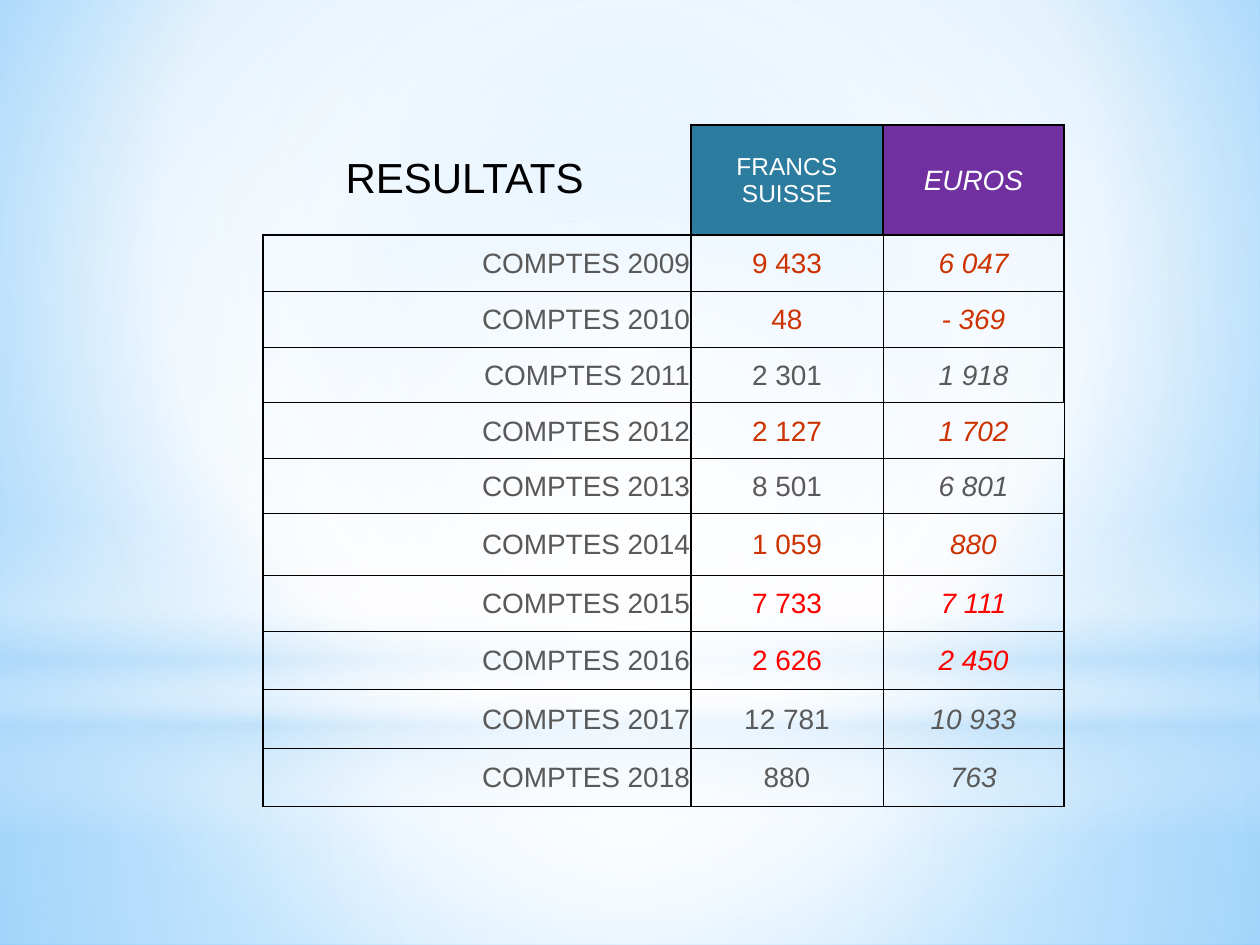
"""Build the yearly results slide with its table in Swiss francs and euros."""
from dataclasses import dataclass

from lxml import etree
from pptx import Presentation
from pptx.dml.color import RGBColor
from pptx.enum.shapes import MSO_SHAPE
from pptx.enum.text import MSO_ANCHOR, PP_ALIGN
from pptx.oxml.ns import qn
from pptx.util import Pt

PX = 914400 // 126
RECT, OVAL = MSO_SHAPE.RECTANGLE, MSO_SHAPE.OVAL
LEFT, CENTER, RIGHT = PP_ALIGN.LEFT, PP_ALIGN.CENTER, PP_ALIGN.RIGHT
MIDDLE, TOP = MSO_ANCHOR.MIDDLE, MSO_ANCHOR.TOP
NO_STYLE = "{2D5ABB26-0587-4C30-8999-92F81FD0307C}"


@dataclass(frozen=True)
class Theme:
    font: str = "Arial"
    black: str = "000000"
    white: str = "FFFFFF"
    grey: str = "595959"
    rust: str = "CC3300"
    red: str = "FF0000"
    teal: str = "2C7C9F"
    purple: str = "7030A0"
    haze: str = "B4DCFA"
    sky: str = "9ED5FF"
    deep_sky: str = "5BB9FF"
    title: int = 24
    body: int = 16
    small: int = 14


T = Theme()


def write(tf, text, size=T.body, color=T.grey, italic=False, align=CENTER):
    p = tf.paragraphs[0]
    p.alignment = align
    r = p.add_run()
    r.text = text
    r.font.name = T.font
    r.font.size = Pt(size)
    r.font.bold = False
    r.font.italic = italic
    r.font.color.rgb = RGBColor.from_string(color)


def blend(fill, element, stops, focus):
    fill.gradient()
    grad = next(element.iter(qn("a:gradFill")))
    for child in list(grad):
        grad.remove(child)
    gs_lst = etree.SubElement(grad, qn("a:gsLst"))
    for pos, color, alpha in stops:
        gs = etree.SubElement(gs_lst, qn("a:gs"), pos=str(pos * 1000))
        clr = etree.SubElement(gs, qn("a:srgbClr"), val=color)
        if alpha < 100:
            etree.SubElement(clr, qn("a:alpha"), val=str(alpha * 1000))
    if focus is None:
        etree.SubElement(grad, qn("a:lin"), ang="5400000", scaled="0")
    else:
        way = etree.SubElement(grad, qn("a:path"), path="circle")
        sides = {k: str(v * 1000) for k, v in zip("ltrb", focus)}
        etree.SubElement(way, qn("a:fillToRect"), **sides)


prs = Presentation()
prs.slide_width, prs.slide_height = 1260 * PX, 945 * PX
s = prs.slides.add_slide(prs.slide_layouts[5])
blend(s.background.fill, s.element,
      [(0, T.sky, 100), (60, T.white, 100), (100, T.deep_sky, 100)], (20, 10, 20, 60))

MID = (50, 50, 50, 50)
glows = [
    (RECT, 703, 242, MID, [(0, T.white, 91), (37, T.white, 76), (100, T.haze, 79)]),
    (RECT, 0, 703, MID, [(0, T.white, 89), (48, T.white, 62), (100, T.haze, 79)]),
    (RECT, 519, 315, None, [(0, T.white, 0), (29, T.white, 30), (45, T.haze, 40),
                            (55, T.white, 26), (65, T.haze, 60), (100, T.white, 0)]),
    (OVAL, 221, 703, MID, [(0, T.white, 100), (56, T.white, 0)]),
]
for kind, top, height, focus, stops in glows:
    sp = s.shapes.add_shape(kind, 0, top * PX, 1260 * PX, height * PX)
    sp.shadow.inherit = False
    sp.line.fill.background()
    blend(sp.fill, sp.element, stops, focus)

results = [
    (2009, "9 433", "6 047", T.rust),
    (2010, "48", "- 369", T.rust),
    (2011, "2 301", "1 918", T.grey),
    (2012, "2 127", "1 702", T.rust),
    (2013, "8 501", "6 801", T.grey),
    (2014, "1 059", "880", T.rust),
    (2015, "7 733", "7 111", T.red),
    (2016, "2 626", "2 450", T.red),
    (2017, "12 781", "10 933", T.grey),
    (2018, "880", "763", T.grey),
]
widths = [428, 192, 181]
heights = [110, 56, 56, 56, 56, 55, 62, 56, 58, 59, 58]
frame = s.shapes.add_table(len(heights), len(widths), 263 * PX, 125 * PX,
                           sum(widths) * PX, sum(heights) * PX)
table = frame.table
table.first_row = table.horz_banding = False
next(table._tbl.iter(qn("a:tableStyleId"))).text = NO_STYLE
for col, width in zip(table.columns, widths):
    col.width = width * PX
for row, height in zip(table.rows, heights):
    row.height = height * PX

write(table.cell(0, 1).text_frame, "FRANCS SUISSE", size=T.small, color=T.white)
write(table.cell(0, 2).text_frame, "EUROS", color=T.white, italic=True)
for i, (year, francs, euros, color) in enumerate(results, 1):
    write(table.cell(i, 0).text_frame, f"COMPTES {year}", align=RIGHT)
    write(table.cell(i, 1).text_frame, francs, color=color)
    write(table.cell(i, 2).text_frame, euros, color=color, italic=True)

header_fills = [None, T.teal, T.purple]
across = [1.5, 1] + [0.5] * len(results)
for i in range(len(heights)):
    down = [1, 1, 1 if i == 0 else 0.5, 0.5 if results[i - 1][0] == 2012 else 1]
    for j in range(len(widths)):
        cell = table.cell(i, j)
        cell.vertical_anchor = MIDDLE
        cell.margin_left = cell.margin_right = cell.margin_top = PX
        cell.margin_bottom = 0
        edges = {"L": down[j], "R": down[j + 1], "T": across[i], "B": across[i + 1]}
        if i == j == 0:
            edges["L"] = edges["T"] = 0
        tc_pr = cell._tc.get_or_add_tcPr()
        for side, weight in edges.items():
            ln = etree.SubElement(tc_pr, qn(f"a:ln{side}"), w=str(Pt(weight)))
            if weight:
                solid = etree.SubElement(ln, qn("a:solidFill"))
                etree.SubElement(solid, qn("a:srgbClr"), val=T.black)
            else:
                etree.SubElement(ln, qn("a:noFill"))
        if i == 0 and header_fills[j]:
            cell.fill.solid()
            cell.fill.fore_color.rgb = RGBColor.from_string(header_fills[j])
        else:
            cell.fill.background()

title = s.shapes.title
title.left, title.top, title.width, title.height = 333 * PX, 145 * PX, 266 * PX, 64 * PX
tf = title.text_frame
tf.word_wrap = False
tf.vertical_anchor = TOP
write(tf, "RESULTATS", size=T.title, color=T.black, align=LEFT)
s.shapes._spTree.append(title.element)

prs.save("out.pptx")
